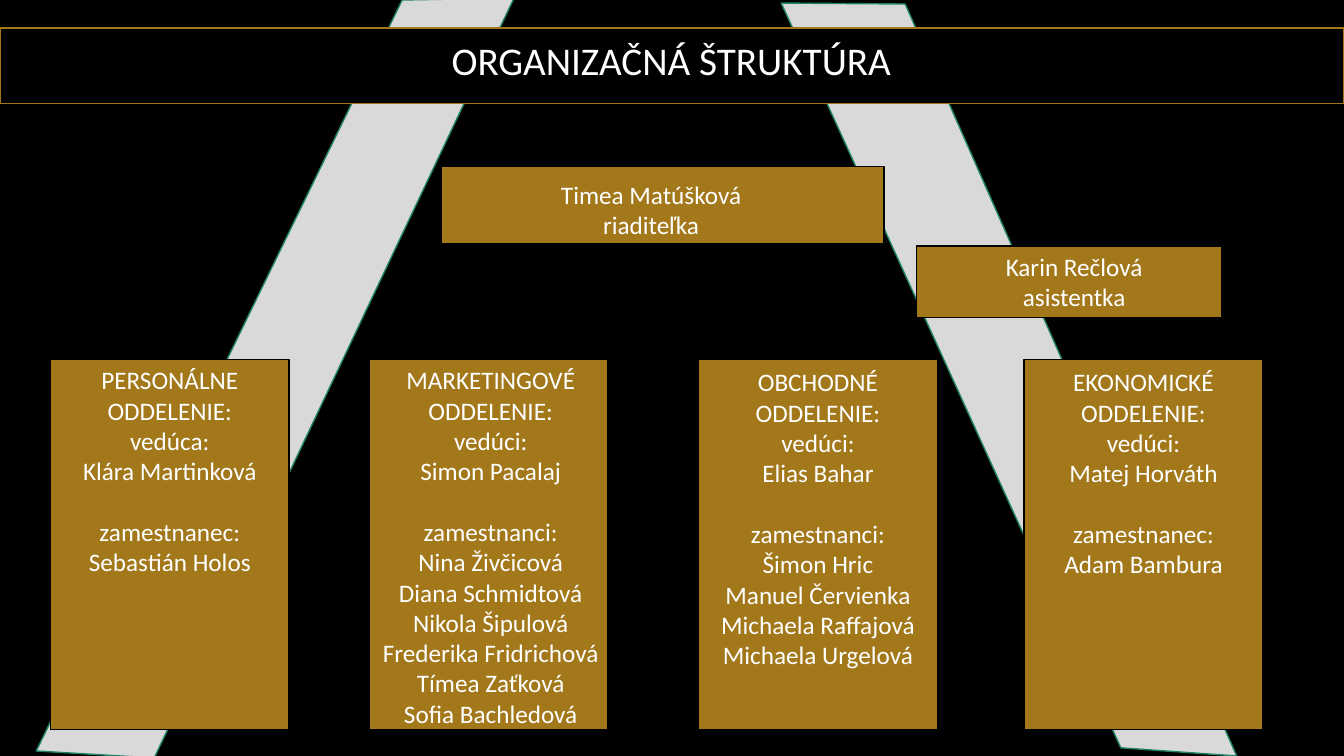
from dataclasses import dataclass

from pptx import Presentation
from pptx.dml.color import RGBColor
from pptx.enum.shapes import MSO_SHAPE
from pptx.enum.text import MSO_ANCHOR, MSO_AUTO_SIZE, PP_ALIGN
from pptx.util import Pt

BLACK = RGBColor(0x00, 0x00, 0x00)
WHITE = RGBColor(0xFF, 0xFF, 0xFF)
GOLD = RGBColor(0xA2, 0x78, 0x1B)
GREY = RGBColor(0xD9, 0xD9, 0xD9)
GREEN = RGBColor(0x1E, 0x81, 0x68)

FONT = "Calibri"
SLIDE_WIDTH, SLIDE_HEIGHT = 960, 540
BLANK_LINE = 22
DEPARTMENT_TOP, DEPARTMENT_WIDTH, DEPARTMENT_HEIGHT = 257, 170.6, 264.2


@dataclass
class Card:
    """A gold box; insets are left, top and right, in points."""
    left: float
    top: float
    width: float
    height: float
    insets: tuple[float, float, float]
    lines: list[str]
    gap_before: int | None = None


@dataclass
class Department:
    left: float
    insets: tuple[float, float, float]
    name: str
    head_role: str
    head: str
    staff_role: str
    staff: list[str]

    def card(self) -> Card:
        heading = [f"{self.name} ODDELENIE:", self.head_role, self.head]
        return Card(self.left, DEPARTMENT_TOP, DEPARTMENT_WIDTH, DEPARTMENT_HEIGHT,
                    self.insets, heading + [self.staff_role] + self.staff, len(heading))


BEAMS = [
    [(558, 2.2), (800.6, 534.2), (883.4, 540), (646.6, 2.9)],
    [(25.9, 536.4), (287.3, 0), (367.2, -1.4), (110.2, 541.4)],
]

MANAGEMENT = [
    Card(315.4, 118.8, 316, 55.4, (37.4, 9.4, 54), ["Timea Matúšková", "riaditeľka"]),
    Card(654.5, 175.7, 218.2, 51.1, (14.4, 3.6, 7.2), ["Karin Rečlová", "asistentka"]),
]

DEPARTMENTS = [
    Department(36, (21.6, 3.6, 21.6), "PERSONÁLNE", "vedúca:", "Klára Martinková",
               "zamestnanec:", ["Sebastián Holos"]),
    Department(263.5, (7.2, 3.6, 3.6), "MARKETINGOVÉ", "vedúci:", "Simon Pacalaj",
               "zamestnanci:", ["Nina Živčicová", "Diana Schmidtová", "Nikola Šipulová",
                                "Frederika Fridrichová", "Tímea Zaťková",
                                "Sofia Bachledová"]),
    Department(499, (12.2, 5, 12.2), "OBCHODNÉ", "vedúci:", "Elias Bahar",
               "zamestnanci:", ["Šimon Hric", "Manuel Červienka", "Michaela Raffajová",
                                "Michaela Urgelová"]),
    Department(731.5, (14.4, 5, 14.4), "EKONOMICKÉ", "vedúci:", "Matej Horváth",
               "zamestnanec:", ["Adam Bambura"]),
]


def paint(shape, fill: RGBColor, line: RGBColor) -> None:
    shape.fill.solid()
    shape.fill.fore_color.rgb = fill
    shape.line.color.rgb = line
    shape.line.width = Pt(1)


def write(shape, lines: list[str], *, insets: tuple[float, float, float],
          size: float = 18, align: PP_ALIGN = PP_ALIGN.CENTER,
          gap_before: int | None = None) -> None:
    """Fill a shape with one paragraph per line, leaving a gap before one of them."""
    frame = shape.text_frame
    frame.word_wrap = True
    frame.auto_size = MSO_AUTO_SIZE.NONE
    frame.vertical_anchor = MSO_ANCHOR.TOP
    frame.margin_left, frame.margin_top, frame.margin_right = map(Pt, insets)
    frame.margin_bottom = Pt(0)
    for index, line in enumerate(lines):
        paragraph = frame.paragraphs[0] if index == 0 else frame.add_paragraph()
        paragraph.alignment = align
        paragraph.line_spacing = 1.0
        paragraph.space_before = Pt(BLANK_LINE if index == gap_before else 0)
        run = paragraph.add_run()
        run.text = line
        run.font.name = FONT
        run.font.size = Pt(size)
        run.font.color.rgb = WHITE


def draw_beam(slide, corners: list[tuple[float, float]]) -> None:
    start, *others = [(Pt(x), Pt(y)) for x, y in corners]
    builder = slide.shapes.build_freeform(*start)
    builder.add_line_segments(others, close=True)
    beam = builder.convert_to_shape()
    beam.shadow.inherit = False
    paint(beam, GREY, GREEN)


def draw_card(slide, card: Card) -> None:
    box = slide.shapes.add_shape(MSO_SHAPE.RECTANGLE, Pt(card.left), Pt(card.top),
                                 Pt(card.width), Pt(card.height))
    box.shadow.inherit = False
    paint(box, GOLD, BLACK)
    write(box, card.lines, insets=card.insets, gap_before=card.gap_before)


def draw_title(slide, text: str) -> None:
    title = slide.shapes.title
    title.left, title.top = Pt(0), Pt(20)
    title.width, title.height = Pt(SLIDE_WIDTH), Pt(54)
    paint(title, BLACK, GOLD)
    write(title, [text], insets=(322.6, 5.8, 7.2), size=28, align=PP_ALIGN.LEFT)
    # The title bar lies in front of the beams
    title.element.getparent().append(title.element)


def main() -> None:
    presentation = Presentation()
    presentation.slide_width = Pt(SLIDE_WIDTH)
    presentation.slide_height = Pt(SLIDE_HEIGHT)
    slide = presentation.slides.add_slide(presentation.slide_layouts.get_by_name("Title Only"))
    slide.background.fill.solid()
    slide.background.fill.fore_color.rgb = BLACK

    # Slanted beams in the background
    for corners in BEAMS:
        draw_beam(slide, corners)

    # Management and departments
    for card in MANAGEMENT + [department.card() for department in DEPARTMENTS]:
        draw_card(slide, card)

    # Title bar
    draw_title(slide, "ORGANIZAČNÁ ŠTRUKTÚRA")

    presentation.save("out.pptx")


if __name__ == "__main__":
    main()
